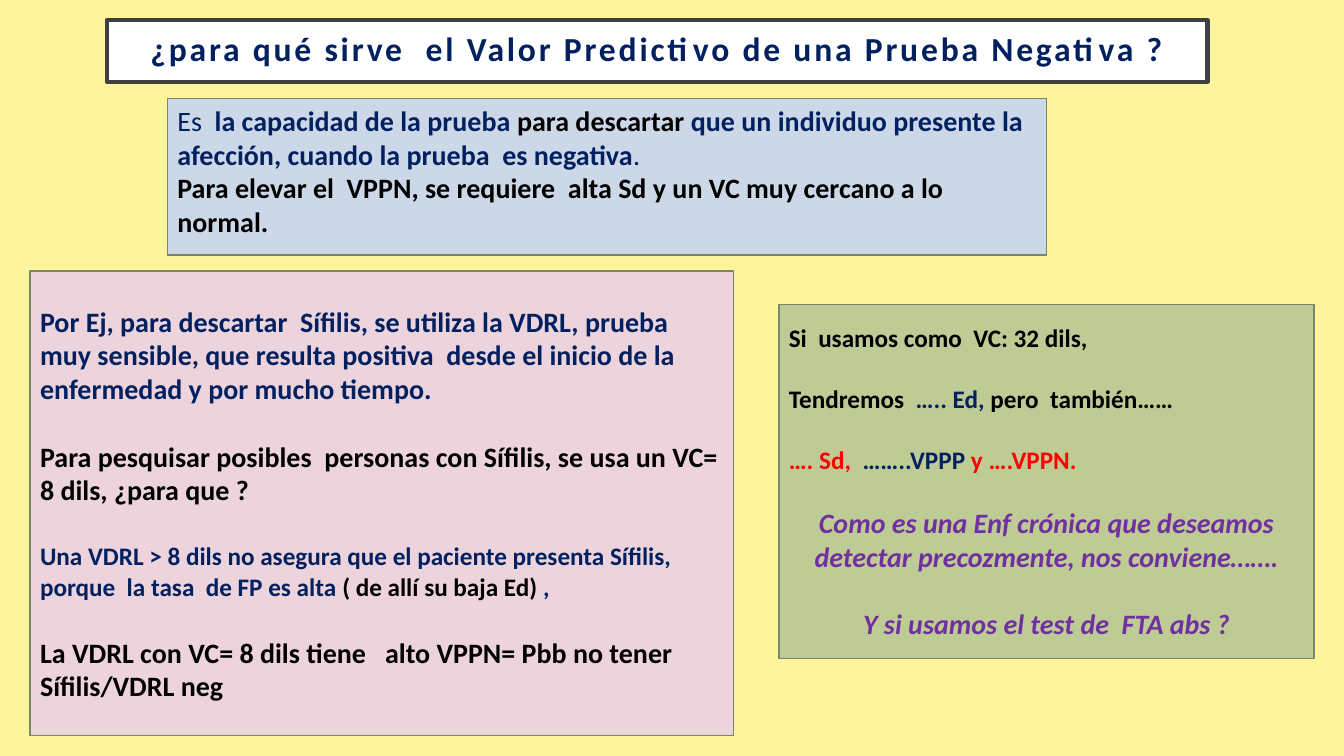
from pptx import Presentation
from pptx import util as u
from pptx.dml.color import RGBColor
from pptx.enum import shapes, text

COLORS = {
    "page": "FDF59C", "white": "FFFFFF", "frame": "404040", "edge": "7A866C",
    "blue": "CCD8E7", "pink": "ECD3DC", "green": "BECB95",
    "navy": "002060", "black": "000000", "red": "FF0000", "purple": "7030A0",
}
LINE_20, LINE_18 = 24.4, 22  # height in points of one text line at each size


def rgb(name):
    return RGBColor.from_string(COLORS[name])


def run(txt, color="navy", size=20, bold=True, italic=False, spacing=None):
    """Describe a piece of text and its format."""
    return dict(txt=txt, color=color, size=size, bold=bold, italic=italic,
                spacing=spacing)


class Deck:
    """Holds the style and the current slide."""
    font = "Calibri"

    def __init__(self):
        self.prs = Presentation()
        self.prs.slide_width, self.prs.slide_height = u.Cm(33.87), u.Cm(19.05)
        self.s = self.prs.slides.add_slide(self.prs.slide_layouts[5])
        self.background("page")

    def background(self, color):
        fill = self.s.background.fill
        fill.solid()
        fill.fore_color.rgb = rgb(color)

    def paint(self, sp, fill, line, width):
        sp.fill.solid()
        sp.fill.fore_color.rgb = rgb(fill)
        sp.line.color.rgb = rgb(line)
        sp.line.width = u.Pt(width)

    def paragraph(self, p, runs, align=text.PP_ALIGN.LEFT, before=0):
        p.alignment = align
        p.space_before = u.Pt(before)
        for item in runs:
            r = p.add_run()
            r.text = item["txt"]
            f = r.font
            f.name, f.size = self.font, u.Pt(item["size"])
            f.bold, f.italic = item["bold"], item["italic"]
            f.color.rgb = rgb(item["color"])
            if item["spacing"]:
                r._r.get_or_add_rPr().set("spc", str(item["spacing"] * 100))

    def title(self, txt, left, top, width, height):
        sp = self.s.shapes.title
        sp.left, sp.top, sp.width, sp.height = map(
            u.Cm, (left, top, width, height))
        self.paint(sp, "white", "frame", 3)
        tf = sp.text_frame
        tf.word_wrap = True
        tf.auto_size = text.MSO_AUTO_SIZE.NONE
        tf.vertical_anchor = text.MSO_ANCHOR.MIDDLE
        tf.margin_left = tf.margin_right = u.Cm(0.76)
        tf.margin_top = tf.margin_bottom = u.Cm(0.51)
        p = tf.paragraphs[0]
        p.line_spacing = 0.9
        self.paragraph(p, [run(txt, size=24, spacing=2)],
                       text.PP_ALIGN.CENTER)

    def box(self, left, top, width, height, fill, paragraphs,
            anchor=text.MSO_ANCHOR.MIDDLE):
        sp = self.s.shapes.add_shape(
            shapes.MSO_SHAPE.RECTANGLE,
            *map(u.Cm, (left, top, width, height)))
        sp.shadow.inherit = False
        self.paint(sp, fill, "edge", 1)
        tf = sp.text_frame
        tf.word_wrap = True
        tf.vertical_anchor = anchor
        for i, (runs, options) in enumerate(paragraphs):
            p = tf.add_paragraph() if i else tf.paragraphs[0]
            self.paragraph(p, runs, **options)


def main():
    d = Deck()
    d.title("¿para qué sirve  el Valor Predictivo de una Prueba Negativa ?",
            2.69, 0.51, 27.74, 1.55)

    # Definition
    d.box(4.22, 2.49, 22.15, 3.94, "blue", [
        ([run("Es ", bold=False),
          run(" la capacidad de la prueba "),
          run("para descartar ", "black"),
          run("que un individuo presente la afección, "
              "cuando la prueba  es negativa"),
          run(".", bold=False)], {}),
        ([run("Para elevar el  VPPN, se requiere  alta Sd y un VC muy "
              "cercano a lo normal.", "black")], {}),
    ], anchor=text.MSO_ANCHOR.TOP)

    # Example
    gap = dict(before=LINE_20)
    d.box(0.76, 6.83, 17.73, 11.71, "pink", [
        ([run("Por Ej, para descartar  Sífilis, se utiliza la VDRL, prueba "
              "muy sensible, que resulta positiva  desde el inicio de la "
              "enfermedad y por mucho tiempo.")], {}),
        ([run("Para pesquisar posibles  personas con Sífilis, se usa un "
              "VC= 8 dils, ¿para que ?", "black")], gap),
        ([run("Una VDRL > 8 dils no asegura que el paciente presenta "
              "Sífilis, porque  la tasa  de FP es alta ", size=18),
          run("( de allí su baja Ed) ", "black", 18),
          run(",", size=18)], gap),
        ([run("La VDRL con VC= 8 dils tiene   alto VPPN= Pbb no tener "
              "Sífilis/VDRL neg", "black")], gap),
    ])

    # Questions
    gap = dict(before=LINE_18)
    center = text.PP_ALIGN.CENTER
    d.box(19.63, 7.67, 13.49, 8.92, "green", [
        ([run("Si  usamos como  VC: 32 dils,", "black", 18)], {}),
        ([run("Tendremos  ", "black", 18),
          run("….. Ed, ", size=18),
          run("pero  también……", "black", 18)], gap),
        ([run("…. Sd,  ", "red", 18),
          run("……..VPPP ", size=18),
          run("y ….VPPN.", "red", 18)], gap),
        ([run("Como es una Enf crónica que deseamos detectar precozmente, "
              "nos conviene…….", "purple", italic=True)],
         dict(align=center, before=LINE_18)),
        ([run("Y si usamos el test de  FTA abs ?", "purple", italic=True)],
         dict(align=center, before=LINE_20)),
    ])

    d.prs.save("out.pptx")


if __name__ == "__main__":
    main()
